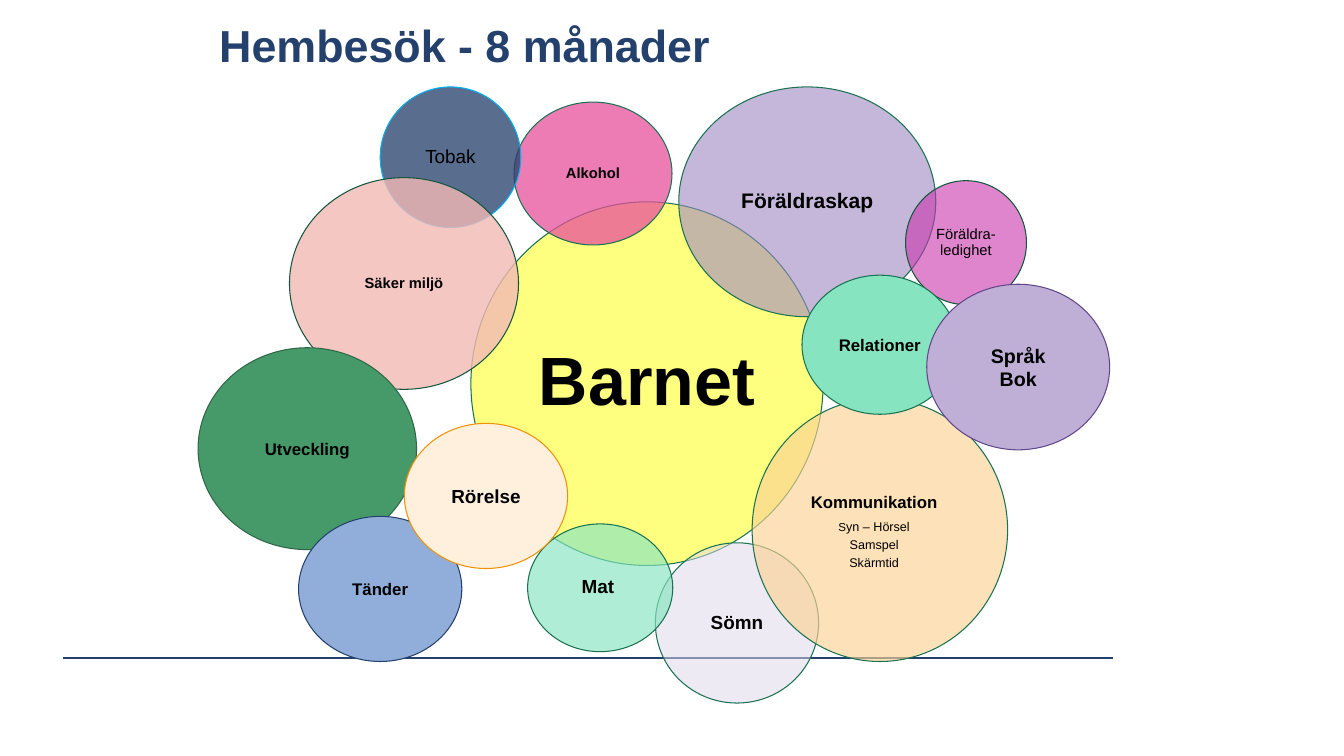
from lxml import etree
from pptx import Presentation
from pptx.dml.color import RGBColor
from pptx.enum.shapes import MSO_CONNECTOR, MSO_SHAPE
from pptx.enum.text import MSO_ANCHOR, PP_ALIGN
from pptx.oxml.ns import qn
from pptx.util import Inches, Pt

NAVY, GREEN, DARK_GREEN = "24406C", "1A7251", "14563D"
TITLE = "Hembesök - 8 månader"
TOPICS = [
    ("Barnet", 65, True, (6.23, 2.67, 4.66, 4.81), "FFFF00", 50, GREEN),
    ("Sömn", 18, True, (8.67, 7.18, 2.16, 2.12), "DFD7EA", 52, GREEN),
    ("Föräldraskap", 20, True, (8.98, 1.15, 3.4, 3.04), "9E88C1", 60, GREEN),
    ("Föräldra-ledighet", 14, False, (11.98, 2.39, 1.6, 1.64), "C834AC", 60, DARK_GREEN),
    ("Kommunikation", 16, True, (9.95, 5.27, 3.38, 3.48), "FBD295", 65, GREEN),
    ("Mat", 18, True, (6.98, 6.93, 1.92, 1.69), "86E4C1", 66, GREEN),
    ("Alkohol", 14, True, (6.8, 1.35, 2.09, 1.89), "E84E9B", 74, GREEN),
    ("Tobak", 18, False, (5.03, 1.15, 1.86, 1.86), "25406B", 76, "00B0F0"),
    ("Säker miljö", 14, True, (3.83, 2.35, 3.03, 2.8), "F3B9B5", 80, DARK_GREEN),
    ("Relationer", 16, True, (10.61, 3.64, 2.06, 1.84), "86E4C1", 100, GREEN),
    ("Språk\nBok", 18.7, True, (12.26, 3.76, 2.42, 2.19), "BFAFD6", 100, "614789"),
    ("Utveckling", 16, True, (2.62, 4.6, 2.89, 2.67), "469A69", 100, "2F6746"),
    ("Tänder", 16, True, (3.95, 6.83, 2.16, 1.92), "91AEDA", 100, NAVY),
    ("Rörelse", 18, True, (5.35, 5.6, 2.16, 1.92), "FEF0DC", 100, "EE9108"),
]
DETAILS = {"Kommunikation": [[("S", 11), ("yn – Hörsel", 12)],
                             [("Samspel", 12)], [("Skärmtid", 12)]]}
RIGHT_INDENTS = {"Kommunikation": 0.15, "Mat": 0.06}


def color(value):
    return RGBColor.from_string(value)


def write(paragraph, text, size=12, bold=False, fill="000000",
          align=PP_ALIGN.CENTER, spacing=1.0, after=0, right_indent=0):
    paragraph.alignment = align
    paragraph.line_spacing = spacing
    paragraph.space_after = Pt(after)
    if right_indent:
        paragraph._p.get_or_add_pPr().set("marR", str(Inches(right_indent)))
    run = paragraph.add_run()
    run.text = text
    font = run.font
    font.name, font.size, font.bold = "Arial", Pt(size), bold
    font.color.rgb = color(fill)


def prepare_frame(shape, anchor, inset):
    frame = shape.text_frame
    frame.word_wrap = True
    frame.vertical_anchor = anchor
    frame.margin_left = frame.margin_right = Inches(inset)
    frame.margin_top = frame.margin_bottom = Inches(inset)
    return frame


def add_circle(slide, label, size, bold, box, fill, opacity, outline):
    circle = slide.shapes.add_shape(MSO_SHAPE.OVAL, *map(Inches, box))
    circle.shadow.inherit = False
    circle.fill.solid()
    circle.fill.fore_color.rgb = color(fill)
    circle.line.color.rgb = color(outline)
    circle.line.width = Pt(1)
    translucent = opacity < 100
    if translucent:
        fill_color = circle._element.spPr.find(qn("a:solidFill"))[0]
        etree.SubElement(fill_color, qn("a:alpha"), val=str(opacity * 1000))
    frame = prepare_frame(circle, MSO_ANCHOR.MIDDLE, 0.02)
    spacing = 0.9 if translucent else 1.0
    details = DETAILS.get(label, [])
    if details:
        frame.margin_top = Inches(0.07)
    for index, line in enumerate(label.split("\n")):
        paragraph = frame.add_paragraph() if index else frame.paragraphs[0]
        write(paragraph, line, size=size, bold=bold, spacing=spacing,
              after=8.5 if details else 0,
              right_indent=RIGHT_INDENTS.get(label, 0))
    for runs in details:
        paragraph = frame.add_paragraph()
        for text, run_size in runs:
            write(paragraph, text, size=run_size, spacing=spacing, after=4.2)


def main():
    presentation = Presentation()
    presentation.slide_width = Inches(17.78)
    presentation.slide_height = Inches(10)
    slide = presentation.slides.add_slide(presentation.slide_layouts[6])

    rule = slide.shapes.add_connector(
        MSO_CONNECTOR.STRAIGHT, Inches(0.84), Inches(8.7), Inches(14.73), Inches(8.7))
    rule.line.color.rgb = color(NAVY)
    rule.line.width = Pt(2)
    etree.SubElement(rule._element.spPr, qn("a:effectLst"))

    title = slide.shapes.add_textbox(*map(Inches, (2.9, 0.28, 12, 0.68)))
    frame = prepare_frame(title, MSO_ANCHOR.BOTTOM, 0)
    write(frame.paragraphs[0], TITLE, size=42.7, bold=True, fill=NAVY,
          align=PP_ALIGN.LEFT, spacing=0.9)

    for topic in TOPICS:
        add_circle(slide, *topic)

    presentation.save("out.pptx")


if __name__ == "__main__":
    main()
